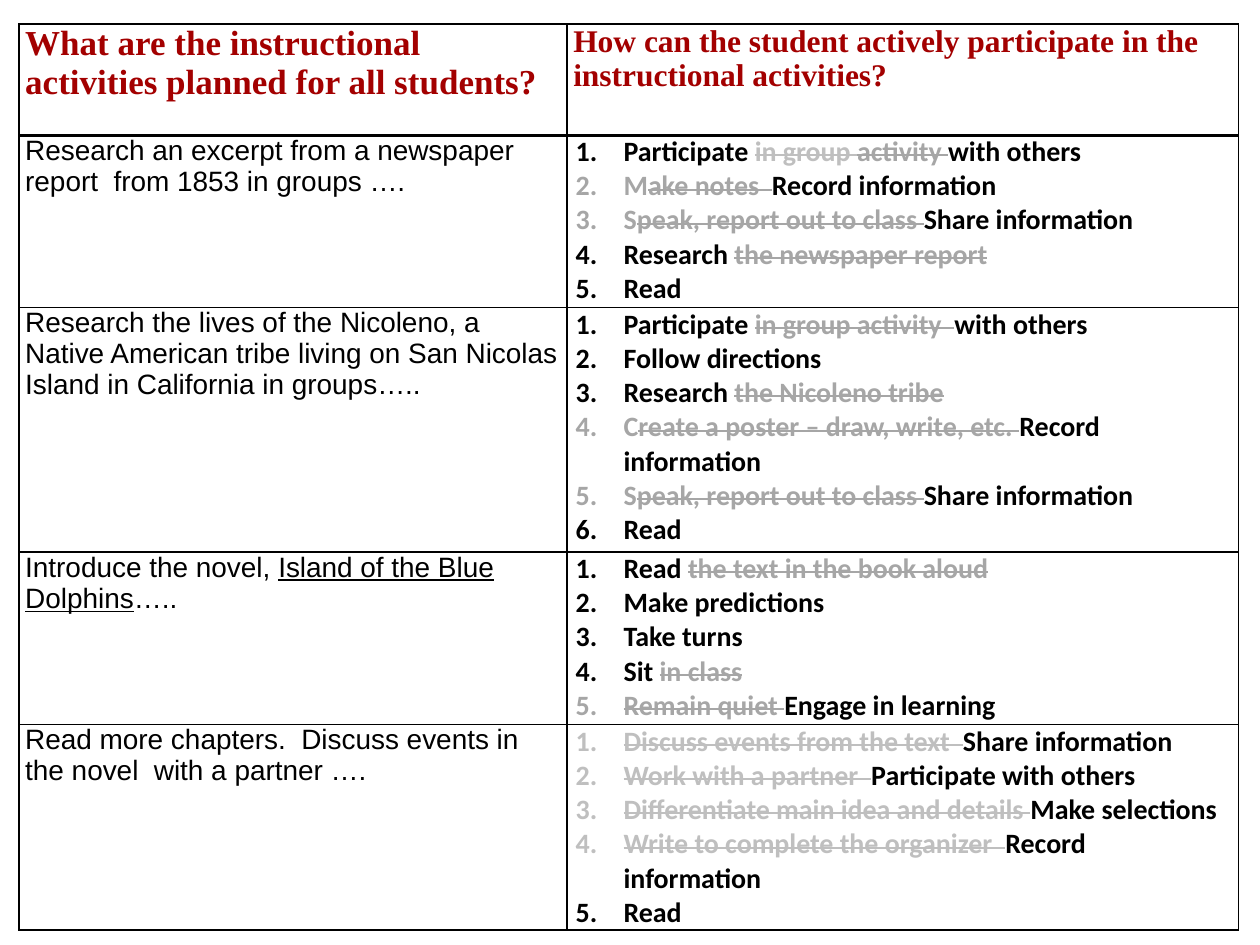
from lxml.etree import SubElement
from pptx import Presentation
from pptx.dml.color import RGBColor
from pptx.oxml.ns import qn
from pptx.util import Inches, Pt

BLACK = RGBColor(0x00, 0x00, 0x00)
WHITE = RGBColor(0xFF, 0xFF, 0xFF)
RED = RGBColor(0xA3, 0x00, 0x00)
GREY = RGBColor(0xA6, 0xA6, 0xA6)
PALE = RGBColor(0xBF, 0xBF, 0xBF)

KEEP = dict(color=BLACK)
DIM = dict(color=GREY)
CUT = dict(color=GREY, strike=True)
FADE = dict(color=PALE, strike=True)
TITLE = dict(font="Times New Roman", color=RED, bold=True)
PLAIN = dict(font="Arial", size=16)
STEP = dict(font="Calibri", size=16, bold=True)

LEFT, WIDTHS = 0.15, (4.35, 5.33)
HEADS = [
    ("What are the instructional activities planned for all students?", 20),
    ("How can the student actively participate in the instructional activities?", 18),
]
ROWS = [
    (1.37, [("Research an excerpt from a newspaper report  from 1853 in groups ….", {})], [
        [("Participate ", KEEP), ("in group ", FADE), ("activity ", CUT), ("with others", KEEP)],
        [("M", DIM), ("ake notes  ", CUT), ("Record information", KEEP)],
        [("S", DIM), ("peak, report out to class ", CUT), ("Share information", KEEP)],
        [("Research ", KEEP), ("the newspaper report", CUT)],
        [("Read", KEEP)],
    ]),
    (1.94, [("Research the lives of the Nicoleno, a Native American tribe living on "
             "San Nicolas Island in California in groups…..", {})], [
        [("Participate ", KEEP), ("in group activity  ", CUT), ("with others", KEEP)],
        [("Follow directions", KEEP)],
        [("Research ", KEEP), ("the Nicoleno tribe", CUT)],
        [("C", DIM), ("reate a poster – draw, write, etc. ", CUT), ("Record information", KEEP)],
        [("S", DIM), ("peak, report out to class ", CUT), ("Share information", KEEP)],
        [("Read", KEEP)],
    ]),
    (1.37, [("Introduce the novel, ", {}), ("Island of the Blue Dolphins", dict(line=True)),
            ("…..", {})], [
        [("Read ", KEEP), ("the text in the book aloud", CUT)],
        [("Make predictions", KEEP)],
        [("Take turns", KEEP)],
        [("Sit ", KEEP), ("in class", CUT)],
        [("Remain quiet ", CUT), ("Engage in learning", KEEP)],
    ]),
    (1.36, [("Read more chapters.  Discuss events in the novel  with a partner ….", {})], [
        [("Discuss events from the text  ", FADE), ("Share information", KEEP)],
        [("Work with a partner  ", FADE), ("Participate with others", KEEP)],
        [("Differentiate main idea and details ", FADE), ("Make selections", KEEP)],
        [("Write to complete the organizer  ", FADE), ("Record information", KEEP)],
        [("Read", KEEP)],
    ]),
]


def write(para, text, font, size, color=BLACK, bold=False, strike=False, line=False):
    run = para.add_run()
    run.text = text
    run.font.name, run.font.size = font, Pt(size)
    run.font.color.rgb = color
    run.font.bold, run.font.underline = bold, line
    if strike:
        run._r.get_or_add_rPr().set("strike", "sngStrike")


def number(para):
    props = para._p.get_or_add_pPr()
    props.set("marL", str(Inches(0.38)))
    props.set("indent", str(-Inches(0.38)))
    SubElement(props, qn("a:buFont"), typeface="+mj-lt")
    SubElement(props, qn("a:buAutoNum"), type="arabicPeriod")


def fill_cell(cell, paras, base, pad=0.05, steps=False):
    cell.margin_left = cell.margin_right = Inches(pad)
    cell.margin_top = cell.margin_bottom = 0
    props = cell._tc.get_or_add_tcPr()
    for side in ("lnL", "lnR", "lnT", "lnB"):
        edge = SubElement(props, qn("a:" + side), w=str(Pt(1)))
        paint = SubElement(edge, qn("a:solidFill"))
        SubElement(paint, qn("a:srgbClr"), val=str(BLACK))
    if steps:
        cell.fill.solid()
        cell.fill.fore_color.rgb = WHITE
    else:
        cell.fill.background()
    frame = cell.text_frame
    for i, runs in enumerate(paras):
        para = frame.add_paragraph() if i else frame.paragraphs[0]
        if steps:
            number(para)
        for text, style in runs:
            write(para, text, **base, **style)


def add_grid(slide, top, highs):
    grid = slide.shapes.add_table(len(highs), len(WIDTHS), Inches(LEFT), Inches(top),
                                  Inches(sum(WIDTHS)), Inches(sum(highs))).table
    grid.first_row = grid.horz_banding = False
    for col, width in zip(grid.columns, WIDTHS):
        col.width = Inches(width)
    for row, high in zip(grid.rows, highs):
        row.height = Inches(high)
    return grid


def main():
    deck = Presentation()
    deck.slide_width, deck.slide_height = Inches(10), Inches(7.5)
    slide = deck.slides.add_slide(deck.slide_layouts[6])

    body = add_grid(slide, 1.07, [high for high, _, _ in ROWS])
    for r, (_, task, steps) in enumerate(ROWS):
        fill_cell(body.cell(r, 0), [task], PLAIN)
        fill_cell(body.cell(r, 1), steps, STEP, pad=0.07, steps=True)

    head = add_grid(slide, 0.19, [0.89])
    for c, (text, size) in enumerate(HEADS):
        fill_cell(head.cell(0, c), [[(text, dict(size=size))]], TITLE)

    deck.save("out.pptx")


if __name__ == "__main__":
    main()
